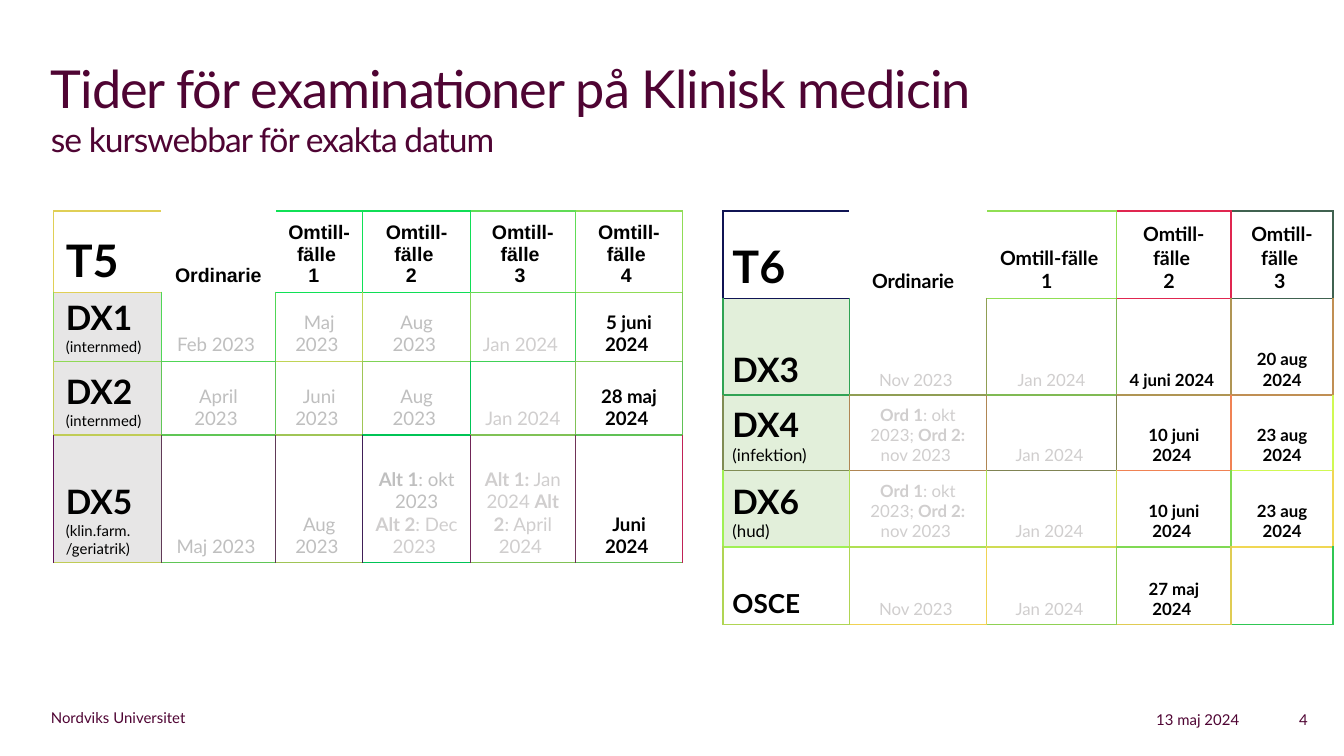
from copy import deepcopy
from dataclasses import dataclass, replace

from lxml import etree
from pptx import Presentation
from pptx.dml.color import RGBColor
from pptx.enum.text import MSO_ANCHOR, PP_ALIGN
from pptx.oxml.ns import qn
from pptx.util import Inches, Pt

LEFT, CENTER, RIGHT = PP_ALIGN.LEFT, PP_ALIGN.CENTER, PP_ALIGN.RIGHT
TOP, MIDDLE, BOTTOM = MSO_ANCHOR.TOP, MSO_ANCHOR.MIDDLE, MSO_ANCHOR.BOTTOM

COLORS = {
    "plum": "4F0433", "black": "000000", "grey": "BFBFBF", "pale": "D0CECE",
    "label grey": "E7E6E6", "label green": "E2EFDA",
}

# Border colours, one per cell in each row
EDGES = {
    "T5": "E0CF56 FFFFFF 10E156 10DE56 60DC56 90DC56",
    "DX1": "90D956 50D656 C0D456 80D356 40D156 80CE56",
    "DX2": "C0CC56 60C656 A0C556 00C456 80C256 60C156",
    "DX5": "601157 603A57 401F57 702557 703357 C02257",
    "T6": "101454 FFFFFF 90DF53 E02650 406250",
    "DX3": "30A354 909E54 80BA54 B09554 C08F54",
    "DX4": "808C54 B08654 808454 F08254 D0F954",
    "DX6": "A0F054 B0E054 D0DC54 80D954 F0D754",
    "OSCE": "B0D554 F0D354 90D154 E0CC54 30C754",
}

HARD_SPACE = chr(160)  # written "~" in the texts below; "|" is a line break


@dataclass
class Segment:
    text: str
    size: float = 8
    color: str = "plum"
    bold: bool = False
    font: str = "Lato"
    spacing: int = 0


@dataclass
class Row:
    name: str
    height: float
    cells: list
    note: str = ""
    name_size: float = 18
    filled: bool = True
    own_divider: bool = False  # the name cell also colours its right side
    repeat_top: bool = False  # the bottom line takes the colour of the top


@dataclass
class Schedule:
    left: float
    width: float
    height: float
    columns: list
    shades: list
    heading_font: str
    date_size: float
    note_size: float
    fill: str
    inset: float
    rows: list


def part(text: str, bold: bool = False, color: str = "") -> Segment:
    return Segment(text, color=color, bold=bold)


def write(paragraph, segments: list, align=LEFT) -> None:
    paragraph.alignment = align
    for segment in segments:
        run = None
        for index, piece in enumerate(segment.text.replace("~", HARD_SPACE).split("|")):
            if index:
                paragraph.add_line_break()
                paragraph._p[-1].append(deepcopy(run._r.rPr))
            if not piece:
                continue
            run = paragraph.add_run()
            run.text = piece
            run.font.size = Pt(segment.size)
            run.font.name = segment.font
            run.font.bold = segment.bold
            run.font.color.rgb = RGBColor.from_string(COLORS[segment.color])
            if segment.spacing:
                run._r.get_or_add_rPr().set("spc", str(segment.spacing))


def add_text(slide, left: float, top: float, width: float, height: float,
             segments: list, align=LEFT, anchor=TOP) -> None:
    box = slide.shapes.add_textbox(Inches(left), Inches(top), Inches(width), Inches(height))
    box.text_frame.word_wrap = True
    box.text_frame.vertical_anchor = anchor
    write(box.text_frame.paragraphs[0], segments, align)


def set_borders(cell, left: str, right: str, top: str, bottom: str) -> None:
    properties = cell._tc.get_or_add_tcPr()
    for side, color in zip("LRTB", (left, right, top, bottom)):
        line = etree.SubElement(properties, qn(f"a:ln{side}"), w=str(Pt(0.75)))
        fill = etree.SubElement(line, qn("a:solidFill"))
        etree.SubElement(fill, qn("a:srgbClr"), val=color)


def cell_segments(schedule: Schedule, row: Row, row_index: int, column: int) -> list:
    if column == 0:
        return [Segment(row.name, row.name_size, "black", True),
                Segment(row.note, schedule.note_size, "black")]
    content = row.cells[column - 1]
    if row_index == 0:
        return [Segment(content, 10.5, "black", True, schedule.heading_font)]
    shade = schedule.shades[column - 1]
    if isinstance(content, str):
        content = [part(content, shade == "black")]
    return [replace(item, size=schedule.date_size, color=item.color or shade)
            for item in content]


def add_schedule(slide, schedule: Schedule) -> None:
    frame = slide.shapes.add_table(
        len(schedule.rows), len(schedule.columns), Inches(schedule.left), Inches(1.57),
        Inches(schedule.width), Inches(schedule.height))
    table = frame.table
    table.first_row = table.horz_banding = False
    for column, width in zip(table.columns, schedule.columns):
        column.width = Inches(width)

    above = EDGES[schedule.rows[0].name.strip("~")].split()
    for row_index, row in enumerate(schedule.rows):
        table.rows[row_index].height = Inches(row.height)
        edges = EDGES[row.name.strip("~")].split()
        below = above if row.repeat_top else edges
        rights = [edges[0 if row.own_divider else 1]] + edges[1:]
        for column in range(len(edges)):
            cell = table.cell(row_index, column)
            set_borders(cell, rights[column - 1] if column else edges[0],
                        rights[column], above[column], below[column])
            if column == 0 and row.filled:
                cell.fill.solid()
                cell.fill.fore_color.rgb = RGBColor.from_string(COLORS[schedule.fill])
            else:
                cell.fill.background()
            wide = row_index == 0 and column > 1
            cell.margin_left = cell.margin_right = Inches(0.09 if wide else schedule.inset)
            cell.margin_top = cell.margin_bottom = Inches(0.04)
            cell.vertical_anchor = BOTTOM
            write(cell.text_frame.paragraphs[0],
                  cell_segments(schedule, row, row_index, column),
                  CENTER if column else LEFT)
        above = below

    # Row and column changes resize the frame, so its size is set last
    frame.width, frame.height = Inches(schedule.width), Inches(schedule.height)


def heading(name: str, height: float, ordinary: str, count: int) -> Row:
    retakes = [f"Omtill-fälle |{number}" + ("~~" if number < 3 else "~")
               for number in range(1, count + 1)]
    return Row(name, height, [ordinary] + retakes, name_size=24, filled=False)


DOUBLE_EXAM = [part("Ord 1", True), part(": okt 2023; "),
               part("Ord 2:", True), part(" nov 2023~")]

TERM_5 = Schedule(
    0.4, 4.68, 2.64, [0.8, 0.85, 0.65, 0.8, 0.78, 0.8],
    ["grey", "grey", "grey", "pale", "black"], "Arial", 10, 8, "label grey", 0.09,
    [heading("T5~", 0, "Ordinarie", 4),
     Row("DX1", 0.45, ["Feb 2023~", "Maj 2023~", "Aug 2023~", "Jan 2024~", "5 juni 2024~"],
         " (internmed)"),
     Row("DX2", 0.55, ["April 2023~", "Juni 2023~", "Aug 2023~", "Jan 2024", "28 maj 2024~"],
         " (internmed)"),
     Row("DX5", 0.95, [
         "Maj 2023~", "Aug 2023~",
         [part("Alt 1", True), part(": okt 2023|"),
          part("Alt 2", True, "pale"), part(": Dec 2023~", color="pale")],
         [part("Alt 1:", True), part(" Jan 2024 "), part("Alt 2", True), part(": April 2024~")],
         "Juni 2024~"], " (klin.farm. /geriatrik)", repeat_top=True)])

TERM_6 = Schedule(
    5.38, 4.53, 3.08, [0.94, 1.02, 0.97, 0.85, 0.76],
    ["pale", "pale", "black", "black"], "Lato", 9, 9, "label green", 0.07,
    [heading("T6~", 0.65, "Ordinarie ~", 3),
     Row("DX3", 0.72, ["Nov 2023~", "Jan 2024", "4 juni 2024~", "20 aug 2024"],
         own_divider=True),
     Row("DX4", 0.56, [DOUBLE_EXAM, "Jan 2024~", "10 juni 2024~", "23 aug 2024"],
         " |(infektion)"),
     Row("DX6", 0.57, [DOUBLE_EXAM, "Jan 2024~", "10 juni 2024~", "23 aug 2024"], " |(hud)"),
     Row("OSCE", 0.58, ["Nov 2023~", "Jan 2024~", "27 maj 2024~", ""],
         name_size=14, filled=False, own_divider=True)])


def main() -> None:
    # Wide 16:9 slide
    presentation = Presentation()
    presentation.slide_width = Inches(10)
    presentation.slide_height = Inches(10) * 9 // 16
    slide = presentation.slides.add_slide(presentation.slide_layouts[6])

    # Title and subtitle
    add_text(slide, 0.28, 0.37, 9.44, 0.94, [
        Segment("Tider för examinationer på Klinisk medicin|", 28, spacing=-50),
        Segment("se kurswebbar för exakta datum", 18, spacing=-50)])

    # Examination schedules
    for schedule in (TERM_5, TERM_6):
        add_schedule(slide, schedule)

    # Footer
    add_text(slide, 0.28, 5.24, 2.36, 0.19, [Segment("Nordviks Universitet")], anchor=MIDDLE)
    add_text(slide, 7.24, 5.24, 2.08, 0.19, [Segment("13 maj 2024")], RIGHT)
    add_text(slide, 9.08, 5.24, 0.75, 0.19, [Segment("4")], RIGHT)

    presentation.save("out.pptx")


if __name__ == "__main__":
    main()
